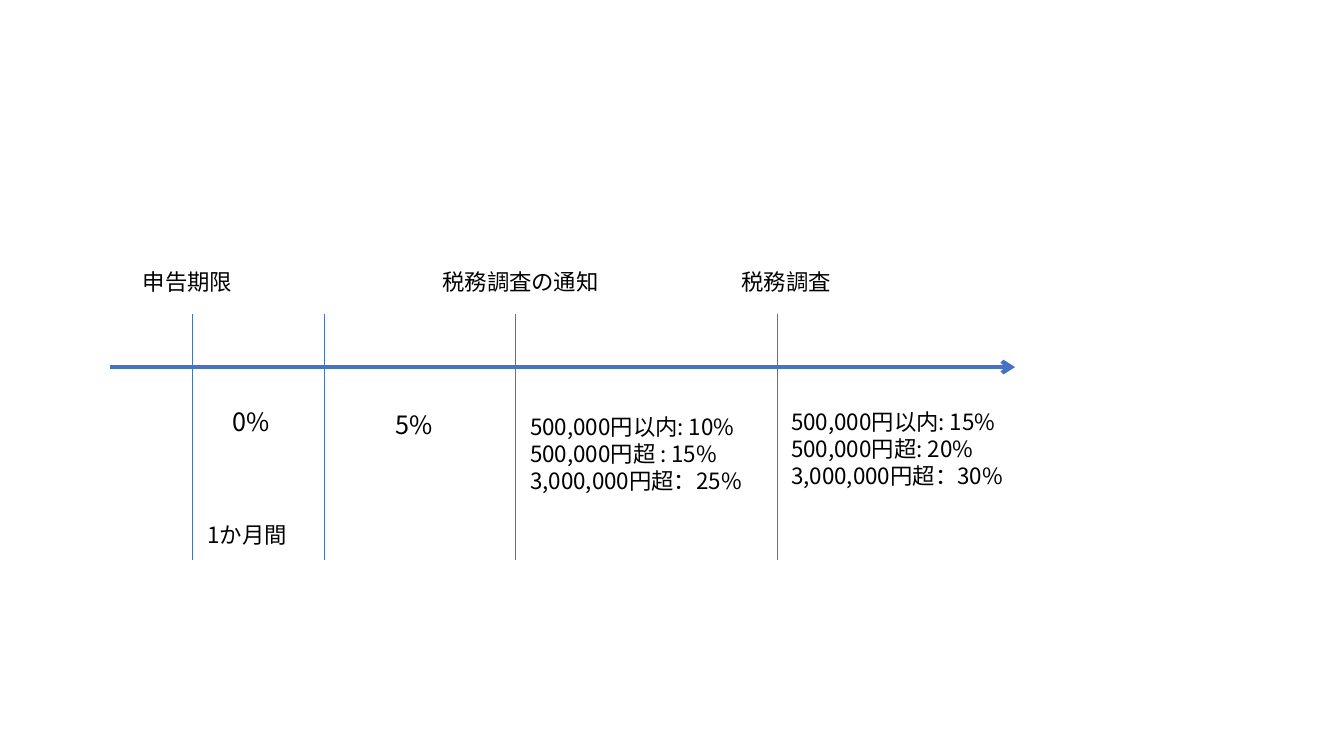
from lxml import etree
from pptx import Presentation
from pptx import util as u
from pptx.dml.color import RGBColor
from pptx.enum import shapes, text
from pptx.oxml.ns import qn

FONT = "Noto Sans CJK JP"
BLUE = "4472C4"
BLACK = "000000"

TICKS = [2.08, 5.41, 10.23, 16.81]
EVENTS = [
    ("申告期限", 0.58, 3.89),
    ("税務調査の通知", 8.13, 5.44),
    ("税務調査", 15.67, 4.47),
]
RATES = [
    (["0%"], 0.76, 3.48, 1.63, 1.02, 18),
    (["5%"], 1.55, 3.55, 1.63, 1.02, 18),
    (["500,000円以内: 10%", "500,000円超 : 15%", "3,000,000円超：25%"],
     0.11, 3.66, 6.48, 3.0, 16),
    (["500,000円以内: 15%", "500,000円超: 20%", "3,000,000円超：30%"],
     0.11, 3.53, 6.71, 2.31, 16),
]


def color(value):
    return RGBColor.from_string(value)


def add_line(slide, start, end, width, arrow=False):
    line = slide.shapes.add_connector(
        shapes.MSO_CONNECTOR.STRAIGHT, *[u.Cm(value) for value in start + end])
    line.line.color.rgb = color(BLUE)
    line.line.width = u.Pt(width)
    properties = line._element.spPr
    if arrow:
        etree.SubElement(properties.find(qn("a:ln")), qn("a:tailEnd"), type="arrow")
    etree.SubElement(properties, qn("a:effectLst"))


def add_label(slide, lines, left, top, width, height, size=16):
    box = slide.shapes.add_textbox(u.Cm(left), u.Cm(top), u.Cm(width), u.Cm(height))
    frame = box.text_frame
    frame.word_wrap = True
    frame.auto_size = text.MSO_AUTO_SIZE.SHAPE_TO_FIT_TEXT
    frame.margin_top = u.Cm(0.18)
    for index, line in enumerate(lines):
        paragraph = frame.add_paragraph() if index else frame.paragraphs[0]
        paragraph.line_spacing = u.Pt(size * 1.2)
        run = paragraph.add_run()
        run.text = line
        run.font.size = u.Pt(size)
        run.font.name = FONT
        run.font.color.rgb = color(BLACK)
        etree.SubElement(run.font._element, qn("a:ea"), typeface=FONT)


def add_timeline(slide, left, top, width, height):
    axis = top + 2.67
    add_line(slide, (left, axis), (left + width, axis), 3, arrow=True)
    for name, offset, label_width in EVENTS:
        add_label(slide, [name], left + offset, top, label_width, 0.94)
    for tick, (lines, offset, drop, *extent) in zip(TICKS, RATES):
        x = left + tick
        add_line(slide, (x, top + 1.34), (x, top + height), 0.5)
        add_label(slide, lines, x + offset, top + drop, *extent)
    add_label(slide, ["1か月間"], left + TICKS[0] + 0.13, top + 6.37, 2.87, 0.94)


def main():
    presentation = Presentation()
    presentation.slide_width = u.Cm(33.87)
    presentation.slide_height = u.Cm(19.05)
    slide = presentation.slides.add_slide(presentation.slide_layouts[6])
    add_timeline(slide, 2.77, 6.58, 22.81, 7.54)
    presentation.save("out.pptx")


if __name__ == "__main__":
    main()
